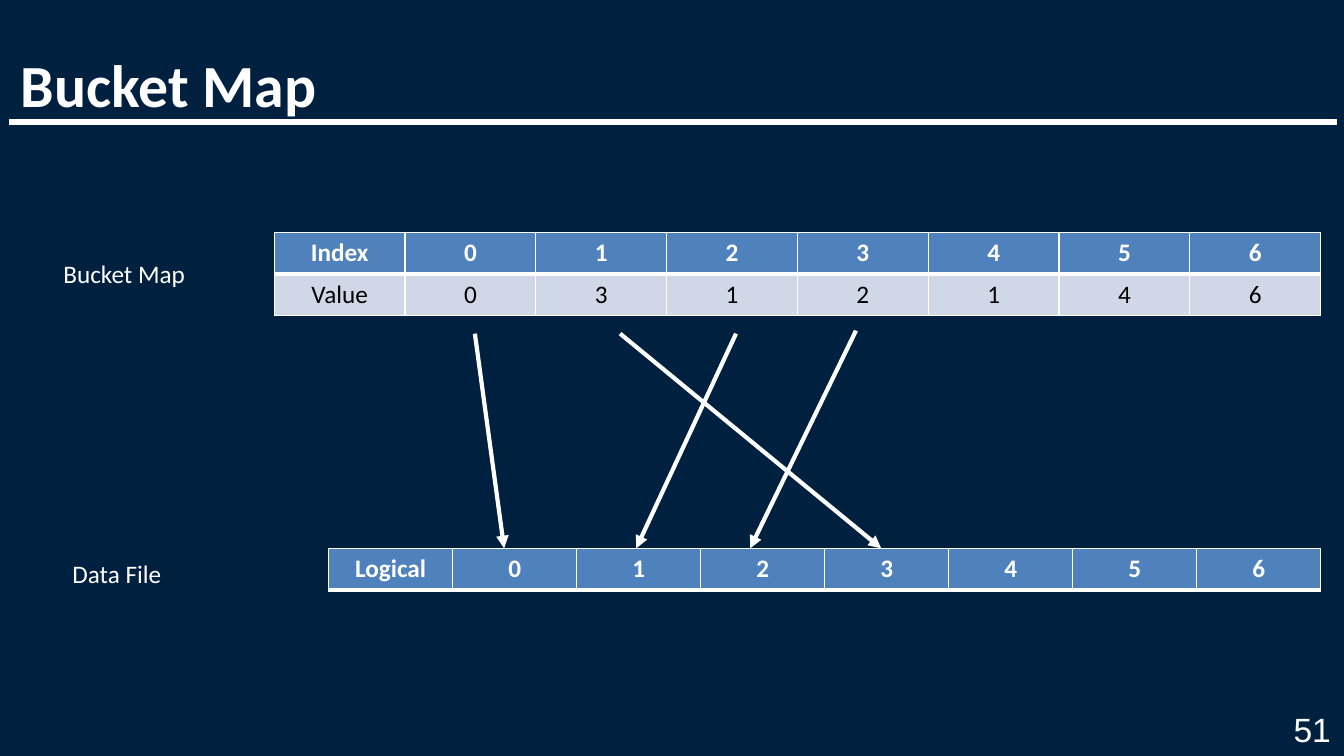
from pptx import Presentation
from pptx.dml.color import RGBColor
from pptx.enum.shapes import MSO_CONNECTOR as CONN
from pptx.enum.text import MSO_ANCHOR as ANCHOR, MSO_AUTO_SIZE as FIT, PP_ALIGN as ALIGN
from pptx.oxml import parse_xml
from pptx.oxml.ns import nsdecls
from pptx.util import Inches, Pt

WHITE, BLACK, NAVY, BLUE, PALE = "FFFFFF", "000000", "002040", "4F81BD", "D0D8E8"
TITLE, PAGE = "Bucket Map", "51"
ROW_H, RIGHT = 0.41, 13.1
TABLES = [
    (2.72, 2.31, [["Index", *"0123456"], ["Value", *"0312146"]]),
    (3.26, 5.44, [["Logical", *"0123456"]]),
]
LABELS = [("Bucket Map", 0.53, 2.51, 1.42), ("Data File", 0.62, 5.49, 1.09)]
ARROWS = [(4.71, 3.31, 5.0), (6.15, 3.31, 8.74), (7.3, 3.31, 6.31), (8.49, 3.28, 7.44)]
ARROW_END = 5.44


def rgb(h):
    return RGBColor.from_string(h)


def style(p, size, color=WHITE, bold=False, font="Calibri", align=ALIGN.LEFT):
    p.alignment = align
    f = p.font
    f.size, f.bold, f.name, f.color.rgb = Pt(size), bold, font, rgb(color)


def add_text(s, text, x, y, w, h, size, margins=None, wrap=True, anchor=ANCHOR.TOP, **look):
    tf = s.shapes.add_textbox(*map(Inches, (x, y, w, h))).text_frame
    tf.word_wrap, tf.vertical_anchor = wrap, anchor
    if margins:
        tf.margin_left, tf.margin_top, tf.margin_right, tf.margin_bottom = map(Inches, margins)
    p = tf.paragraphs[0]
    p.text = text
    style(p, size, **look)
    return tf


def add_line(s, x1, y1, x2, y2, width, arrow=False):
    c = s.shapes.add_connector(CONN.STRAIGHT, *map(Inches, (x1, y1, x2, y2)))
    c.line.color.rgb, c.line.width = rgb(WHITE), Pt(width)
    if arrow:
        c.line._get_or_add_ln().append(parse_xml(f'<a:tailEnd {nsdecls("a")} type="triangle"/>'))
    c._element.spPr.append(parse_xml(f'<a:effectLst {nsdecls("a")}/>'))


def set_borders(cell, top, bottom):
    widths = {"lnL": 1, "lnR": 1, "lnT": top, "lnB": bottom}
    for i, (tag, w) in enumerate(widths.items()):
        cell._tc.get_or_add_tcPr().insert(i, parse_xml(
            f'<a:{tag} {nsdecls("a")} w="{Pt(w)}"><a:solidFill>'
            f'<a:srgbClr val="{WHITE}"/></a:solidFill></a:{tag}>'))


def add_grid(s, x, y, rows):
    n = len(rows[0])
    frame = s.shapes.add_table(len(rows), n, *map(Inches, (x, y, RIGHT - x, ROW_H * len(rows))))
    for i, row in enumerate(rows):
        head = i == 0
        for j, text in enumerate(row):
            cell = frame.table.cell(i, j)
            cell.fill.solid()
            cell.fill.fore_color.rgb = rgb(BLUE if head else PALE)
            set_borders(cell, *((1, 3) if head else (3, 1)))
            cell.text = text
            style(cell.text_frame.paragraphs[0], 18, WHITE if head else BLACK, head,
                  align=ALIGN.CENTER)


def main():
    """Build the bucket map slide."""
    prs = Presentation()
    prs.slide_width, prs.slide_height = Inches(13.33), Inches(7.5)
    s = prs.slides.add_slide(prs.slide_layouts[6])
    s.background.fill.solid()
    s.background.fill.fore_color.rgb = rgb(NAVY)

    add_line(s, 0.09, 1.21, 13.26, 1.21, 3.75)
    add_text(s, PAGE, 12.76, 7.03, 0.44, 0.28, 24, (0, 0, 0, 0), font="Arial", align=ALIGN.RIGHT)
    tf = add_text(s, TITLE, 0.11, 0, 13.11, 1.19, 42.7, (0.1, 0, 0.1, 0),
                  anchor=ANCHOR.BOTTOM, bold=True)
    tf.paragraphs[0].line_spacing = 0.89

    for x, y, rows in TABLES:
        add_grid(s, x, y, rows)
    for text, x, y, w in LABELS:
        tf = add_text(s, text, x, y, w, 0.4, 18, wrap=False)
        tf.auto_size = FIT.SHAPE_TO_FIT_TEXT
    for x1, y1, x2 in ARROWS:
        add_line(s, x1, y1, x2, ARROW_END, 3, arrow=True)
    prs.save("out.pptx")


if __name__ == "__main__":
    main()
